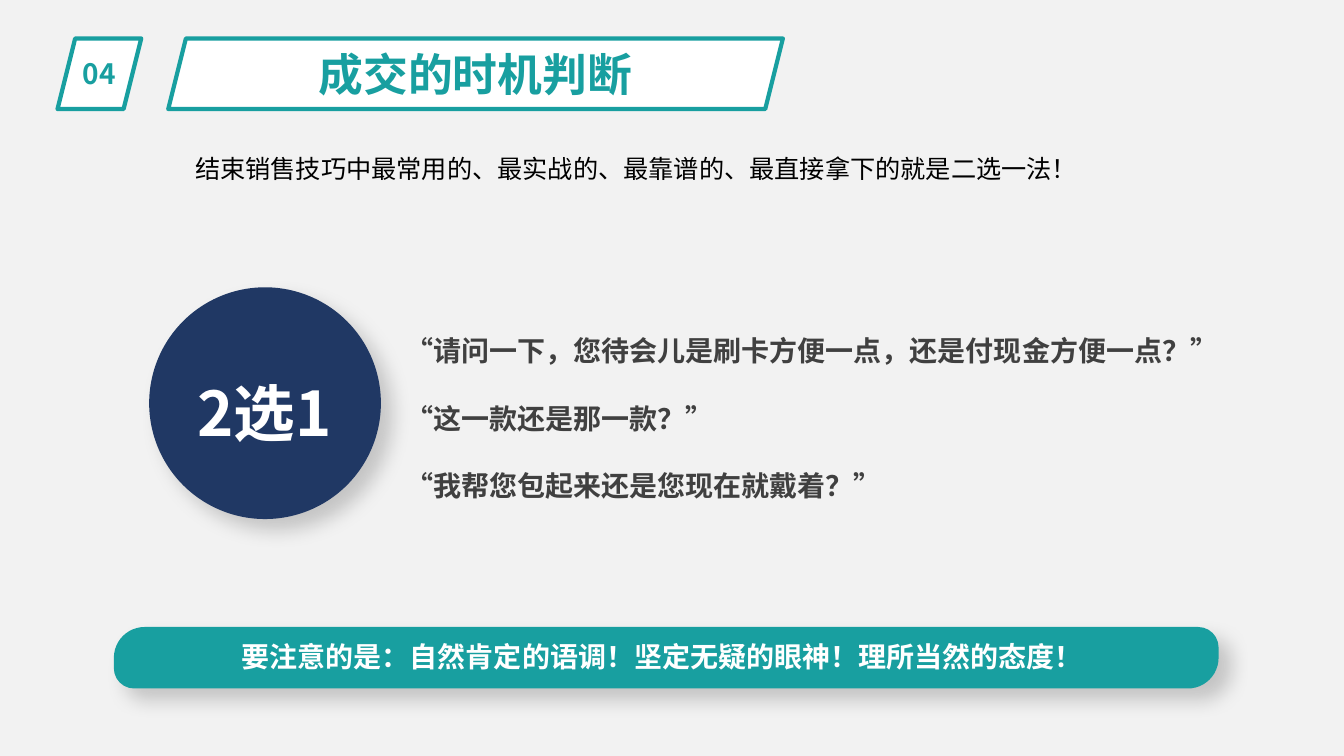
from lxml import etree
from pptx import Presentation
from pptx import util as u
from pptx.dml.color import RGBColor
from pptx.enum import shapes, text
from pptx.oxml import parse_xml
from pptx.oxml.ns import nsdecls, qn

FONT = "Noto Sans CJK SC"
TEAL, NAVY, WHITE = "189FA0", "203864", "FFFFFF"
KIND = shapes.MSO_SHAPE
MID = text.PP_ALIGN.CENTER
LEFT = text.PP_ALIGN.LEFT


def paint(fill, color):
    fill.solid()
    fill.fore_color.rgb = RGBColor.from_string(color)


def write(frame, lines, size, color, bold=True, align=MID, gap=None):
    """Fill a text frame with one paragraph per line."""
    frame.text = "\n".join(lines)
    for para in frame.paragraphs:
        para.alignment = align
        if gap:
            para.line_spacing = gap
        for run in para.runs:
            font = run.font
            font.size, font.bold, font.name = u.Pt(size), bold, FONT
            paint(font.fill, color)
            east = etree.SubElement(run._r.get_or_add_rPr(), qn("a:ea"))
            east.set("typeface", FONT)


def add_form(parent, kind, box, color):
    form = parent.add_shape(kind, *map(u.Cm, box))
    form.shadow.inherit = False
    paint(form.fill, color)
    form.line.fill.background()
    return form


def add_tag(parent, box, label, size):
    """Slanted white header box with a teal outline."""
    tag = add_form(parent, KIND.PARALLELOGRAM, box, WHITE)
    paint(tag.line.fill, TEAL)
    tag.line.width = u.Pt(3)
    tag.text_frame.vertical_anchor = text.MSO_ANCHOR.MIDDLE
    write(tag.text_frame, [label], size, TEAL)


def add_note(parent, box, lines, size, color, wrap=True, **style):
    note = parent.add_textbox(*map(u.Cm, box))
    frame = note.text_frame
    frame.word_wrap = wrap
    frame.auto_size = text.MSO_AUTO_SIZE.SHAPE_TO_FIT_TEXT
    write(frame, lines, size, color, **style)


def add_shade(form):
    """Soft shadow to the lower right."""
    props = form._element.spPr
    props.remove(props.find(qn("a:effectLst")))
    props.append(parse_xml(
        f'<a:effectLst {nsdecls("a")}>'
        f'<a:outerShdw blurRad="{u.Pt(14)}" dist="{u.Pt(11)}" '
        'dir="2700000" algn="tl" rotWithShape="0">'
        '<a:srgbClr val="000000"><a:alpha val="18000"/></a:srgbClr>'
        '</a:outerShdw></a:effectLst>'))


def main():
    deck = Presentation()
    deck.slide_width, deck.slide_height = u.Cm(33.87), u.Cm(19.05)
    slide = deck.slides.add_slide(deck.slide_layouts[6])
    paint(slide.background.fill, "F2F2F2")
    items = slide.shapes

    # Header
    add_tag(items, (1.45, 0.97, 2.11, 1.78), "04", 20)
    add_tag(items, (4.24, 0.97, 15.49, 1.78), "成交的时机判断", 32)

    # Lead sentence
    add_note(items, (3.23, 3.73, 25.6, 1.02),
             ["结束销售技巧中最常用的、最实战的、最靠谱的、最直接拿下的就是二选一法！"],
             18, "000000", bold=False)

    # Round badge
    badge = items.add_group_shape().shapes
    add_shade(add_form(badge, KIND.OVAL, (3.76, 7.24, 5.84, 5.84), NAVY))
    add_note(badge, (4.11, 8.76, 5.13, 2.46), ["2选1"], 44, WHITE, gap=1.3)

    # Sample questions
    add_note(items, (9.96, 7.44, 21.46, 5.13),
             ["“请问一下，您待会儿是刷卡方便一点，还是付现金方便一点？”",
              "“这一款还是那一款？”",
              "“我帮您包起来还是您现在就戴着？”"],
             20, "404040", align=LEFT, gap=2.0)

    # Closing banner
    foot = items.add_group_shape().shapes
    bar = add_form(foot, KIND.ROUND_2_DIAG_RECTANGLE,
                   (2.87, 15.8, 27.84, 1.55), TEAL)
    bar.adjustments[0], bar.adjustments[1] = 0.5, 0.33
    add_shade(bar)
    add_note(foot, (5.84, 16, 21.89, 1.12),
             ["要注意的是：自然肯定的语调！坚定无疑的眼神！理所当然的态度！"],
             20, WHITE, wrap=False, align=LEFT)

    deck.save("out.pptx")


if __name__ == "__main__":
    main()
